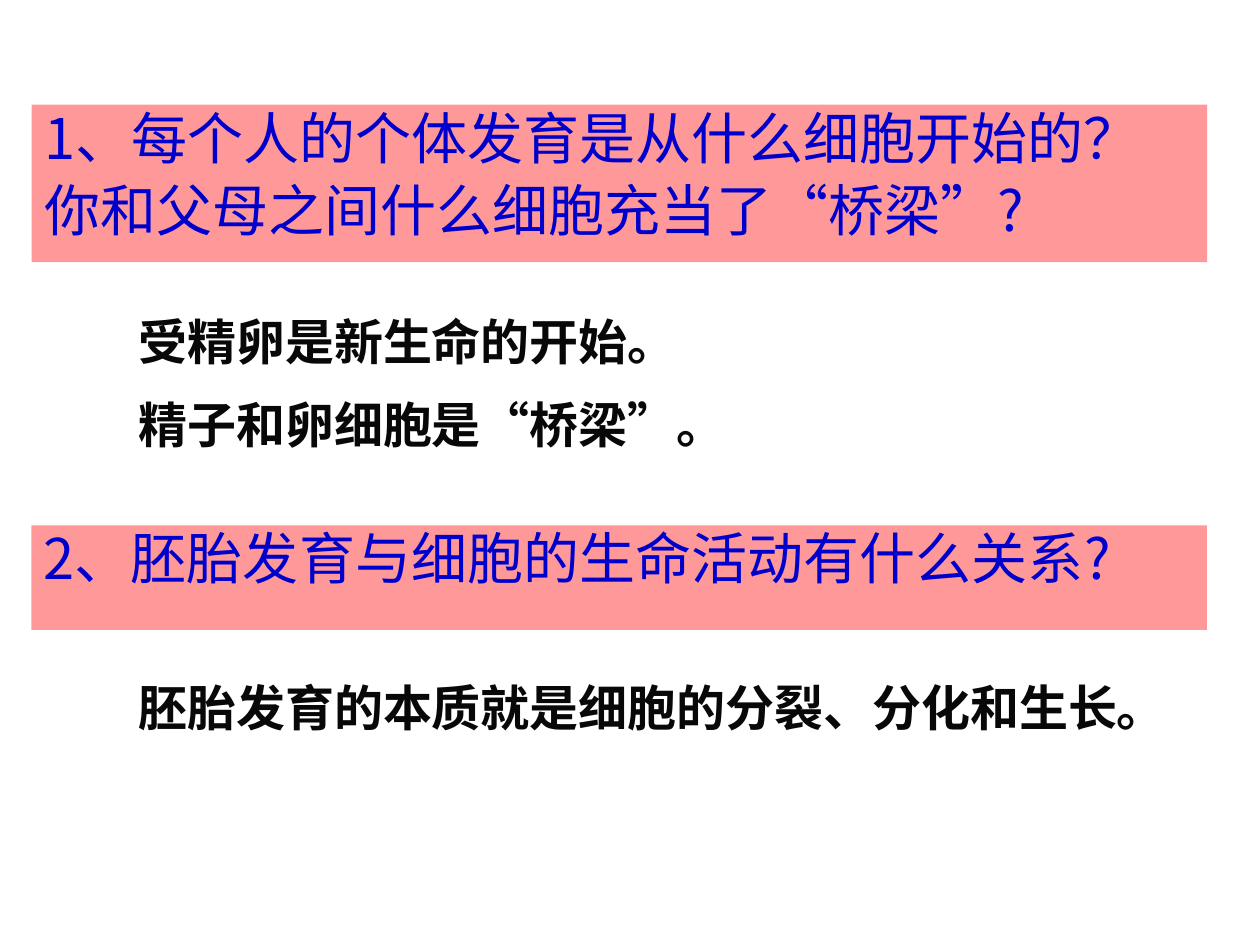
"""Build a slide of two questions on cell development with their answers."""
from pptx import Presentation
from pptx import util as u
from pptx.dml.color import RGBColor
from pptx.enum import shapes, text
from pptx.oxml.ns import qn
from lxml import etree

COLORS = {"band": "FF9999", "question": "0000CC", "answer": "080808"}
QUESTION = {"name": "Noto Sans CJK SC", "size": u.Pt(32), "bold": False}
ANSWER = {"name": "Arial", "size": u.Pt(28), "bold": True}


def write_lines(box, lines, font_values, color, gap, spacing):
    frame = box.text_frame
    frame.word_wrap = True
    frame.auto_size = text.MSO_AUTO_SIZE.NONE
    frame.vertical_anchor = text.MSO_ANCHOR.TOP
    for index, line in enumerate(lines):
        para = frame.paragraphs[0] if index == 0 else frame.add_paragraph()
        para.alignment = text.PP_ALIGN.LEFT
        para.line_spacing = spacing
        para.space_before = u.Pt(gap if index else 0)
        span = para.add_run()
        span.text = line
        for key, value in font_values.items():
            setattr(span.font, key, value)
        span.font.color.rgb = RGBColor.from_string(COLORS[color])


deck = Presentation()
deck.slide_width, deck.slide_height = u.Inches(10), u.Inches(7.5)
page = deck.slides.add_slide(deck.slide_layouts[1])
title, first_question = page.placeholders
title.element.getparent().remove(title.element)
second_question = page.shapes.add_shape(
    shapes.MSO_SHAPE.RECTANGLE, 0, 0, u.Inches(1), u.Inches(1))
second_question.shadow.inherit = False
second_question.line.fill.background()

questions = [
    (first_question, 0.83, 1.25,
     ["1、每个人的个体发育是从什么细胞开始的？", "你和父母之间什么细胞充当了“桥梁”?"]),
    (second_question, 4.17, 0.83, ["2、胚胎发育与细胞的生命活动有什么关系?"]),
]
for box, top, height, lines in questions:
    box.left, box.top = u.Inches(0.25), u.Inches(top)
    box.width, box.height = u.Inches(9.33), u.Inches(height)
    box.fill.solid()
    box.fill.fore_color.rgb = RGBColor.from_string(COLORS["band"])
    write_lines(box, lines, QUESTION, "question", 6.4, 0.9)
    for para in box.text_frame.paragraphs:
        properties = para._p.get_or_add_pPr()
        properties.set("marL", str(u.Inches(0.38)))
        properties.set("indent", str(u.Inches(-0.38)))
        etree.SubElement(properties, qn("a:buNone"))

answers = [
    (2.42, 6.42, 1.27, ["受精卵是新生命的开始。", "精子和卵细胞是“桥梁”。"]),
    (5.33, 8.25, 0.57, ["胚胎发育的本质就是细胞的分裂、分化和生长。"]),
]
for top, width, height, lines in answers:
    box = page.shapes.add_textbox(
        u.Inches(1), u.Inches(top), u.Inches(width), u.Inches(height))
    write_lines(box, lines, ANSWER, "answer", 14, 1.0)

deck.save("out.pptx")
